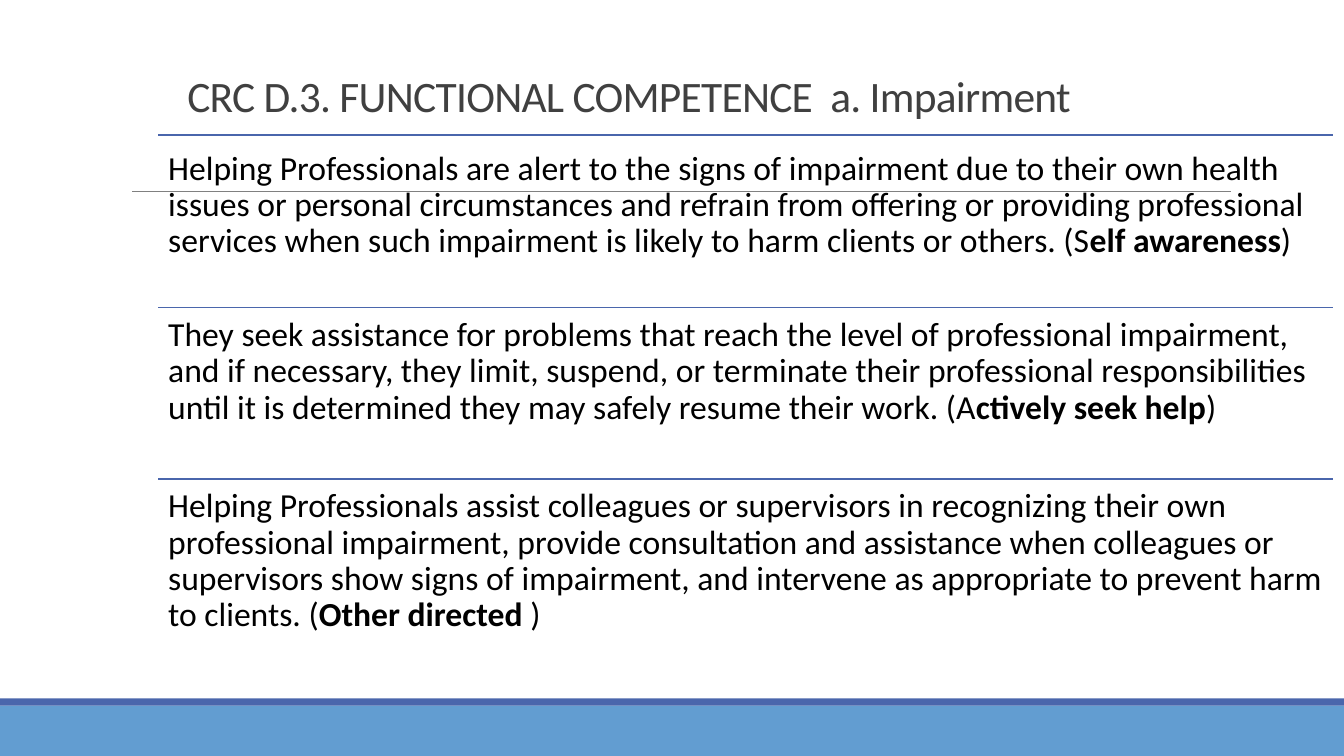
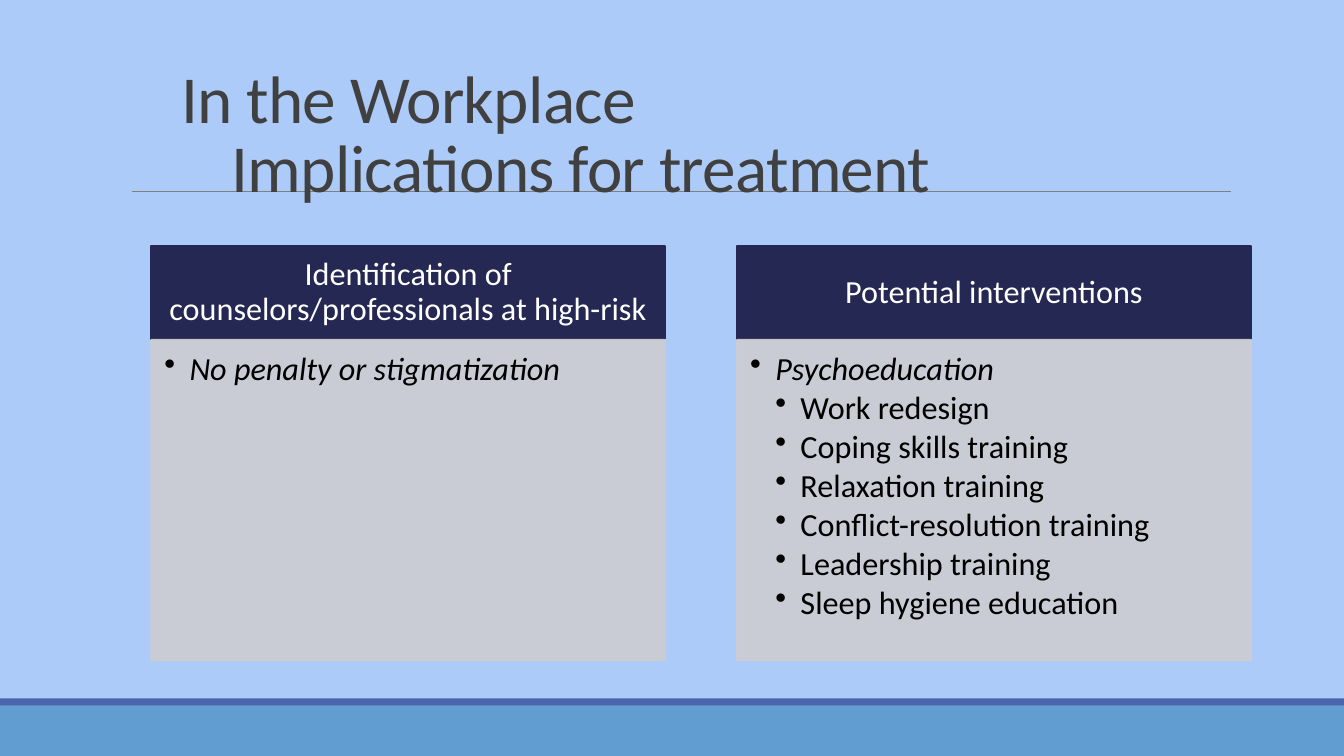
"""Build two slides on impairment and its implications in the workplace."""
from dataclasses import dataclass
from typing import NamedTuple

from lxml.etree import SubElement
from pptx import Presentation
from pptx.dml.color import RGBColor
from pptx.enum.shapes import MSO_CONNECTOR as Connector, MSO_SHAPE as Preset
from pptx.enum.text import MSO_ANCHOR as Anchor, PP_ALIGN as Align
from pptx.oxml.ns import qn
from pptx.util import Inches, Pt

FONT = "Calibri"
COLORS = {
    "white": "FFFFFF",
    "sky": "ACCBF9",
    "band": "629DD1",
    "accent": "4A66AC",
    "rule": "808080",
    "title": "404040",
    "text": "000000",
    "header": "242852",
    "panel": "CDCDD1",
}
PAGE_WIDTH, PAGE_HEIGHT = 13.33, 7.5
DUTY_LEFT, DUTY_RIGHT = 1.57, 13.22
CARD_LEFT, CARD_TOP, CARD_WIDTH, CARD_STEP = 1.5, 2.44, 5.1, 5.81
HEADER_HEIGHT, PANEL_HEIGHT = 0.93, 3.18


class Area(NamedTuple):
    left: float
    top: float
    width: float
    height: float


@dataclass
class Duty:
    rule_top: float
    text_top: float
    text: str
    keyword: str


@dataclass
class Card:
    heading: str
    lead: str
    details: tuple[str, ...] = ()


DUTIES = [
    Duty(1.34, 1.4,
         "Helping Professionals are alert to the signs of impairment due to their own "
         "health issues or personal circumstances and refrain from offering or providing "
         "professional services when such impairment is likely to harm clients or "
         "others. (S", "elf awareness"),
    Duty(3.05, 3.05,
         "They seek assistance for problems that reach the level of professional "
         "impairment, and if necessary, they limit, suspend, or terminate their "
         "professional responsibilities until it is determined they may safely resume "
         "their work. (A", "ctively seek help"),
    Duty(4.75, 4.75,
         "Helping Professionals assist colleagues or supervisors in recognizing their own "
         "professional impairment, provide consultation and assistance when colleagues "
         "or supervisors show signs of impairment, and intervene as appropriate to "
         "prevent harm to clients. (", "Other directed "),
]
CARDS = [
    Card("Identification of counselors/professionals at high-risk",
         "No penalty or stigmatization"),
    Card("Potential interventions", "Psychoeducation",
         ("Work redesign", "Coping skills training", "Relaxation training",
          "Conflict-resolution training", "Leadership training",
          "Sleep hygiene education")),
]


def color(name: str) -> RGBColor:
    """Look up a named colour."""
    return RGBColor.from_string(COLORS[name])


def add_span(para, text: str, *, size: float, fill: str = "text", bold: bool = False,
             italic: bool = False, spacing: float = 0) -> None:
    """Add one formatted run to a paragraph."""
    span = para.add_run()
    span.text = text
    font = span.font
    font.name, font.size, font.bold, font.italic = FONT, Pt(size), bold, italic
    font.color.rgb = color(fill)
    if spacing:
        span._r.get_or_add_rPr().set("spc", str(round(spacing * 100)))


def set_frame(frame, insets: tuple[float, float, float, float], anchor=Anchor.TOP) -> None:
    """Set wrapping, anchor and left, top, right and bottom insets."""
    frame.word_wrap = True
    frame.vertical_anchor = anchor
    (frame.margin_left, frame.margin_top,
     frame.margin_right, frame.margin_bottom) = map(Inches, insets)


def add_text_box(page, area: Area, insets: tuple[float, float, float, float],
                 anchor=Anchor.TOP):
    """Add a text box and return its frame."""
    frame = page.shapes.add_textbox(*map(Inches, area)).text_frame
    set_frame(frame, insets, anchor)
    return frame


def add_rectangle(page, area: Area, fill: str, *, outlined: bool = False,
                  opacity: int = 100):
    """Add a flat rectangle, optionally outlined in its own fill colour."""
    box = page.shapes.add_shape(Preset.RECTANGLE, *map(Inches, area))
    box.shadow.inherit = False
    box.fill.solid()
    box.fill.fore_color.rgb = color(fill)
    if outlined:
        box.line.color.rgb = color(fill)
        box.line.width = Pt(1.25)
    else:
        box.line.fill.background()
    if opacity < 100:
        for tint in box._element.spPr.iter(qn("a:srgbClr")):
            SubElement(tint, qn("a:alpha")).set("val", str(opacity * 1000))
    return box


def add_rule(page, left: float, right: float, top: float, stroke: str,
             width: float) -> None:
    """Draw a horizontal line without a shadow."""
    rule = page.shapes.add_connector(
        Connector.STRAIGHT, Inches(left), Inches(top), Inches(right), Inches(top))
    rule.line.color.rgb = color(stroke)
    rule.line.width = Pt(width)
    SubElement(rule._element.spPr, qn("a:effectLst"))


def add_page(deck, background: str, title: str, area: Area, size: float):
    """Add a slide with the shared bands, rule and title style."""
    page = deck.slides.add_slide(deck.slide_layouts[6])
    page.background.fill.solid()
    page.background.fill.fore_color.rgb = color(background)
    add_rectangle(page, Area(0, 7, PAGE_WIDTH, 0.5), "band")
    add_rectangle(page, Area(0, 6.93, PAGE_WIDTH, 0.07), "accent")
    add_rule(page, 1.31, 12.21, 1.9, "rule", 0.5)
    para = add_text_box(page, area, (0.1, 0.05, 0.1, 0.05), Anchor.BOTTOM).paragraphs[0]
    para.line_spacing = 0.85
    for index, line in enumerate(title.split("\n")):
        if index:
            para.add_line_break()
        add_span(para, line, size=size, fill="title", spacing=-0.5)
    return page


def add_duty(page, duty: Duty) -> None:
    """Draw a rule with a statement below it."""
    add_rule(page, DUTY_LEFT, DUTY_RIGHT, duty.rule_top, "accent", 1.25)
    area = Area(DUTY_LEFT, duty.text_top, 11.64, 1.7)
    para = add_text_box(page, area, (0.1, 0.1, 0.1, 0.1)).paragraphs[0]
    para.line_spacing = 0.9
    add_span(para, duty.text, size=24)
    add_span(para, duty.keyword, size=24, bold=True)
    add_span(para, ")", size=24)


def add_bullet(para, text: str, level: int) -> None:
    """Format a paragraph as a bullet; the first level is italic."""
    properties = para._p.get_or_add_pPr()
    properties.set("marL", str(Inches(0.25 * level)))
    properties.set("indent", str(Inches(-0.25)))
    SubElement(properties, qn("a:buChar")).set("char", "•")
    para.level = level
    para.alignment = Align.LEFT
    para.line_spacing = 0.9
    para.space_after = Pt(3)
    add_span(para, text, size=23, italic=level == 1)


def add_card(page, card: Card, left: float) -> None:
    """Draw a heading bar with a bulleted panel under it."""
    header = add_rectangle(page, Area(left, CARD_TOP, CARD_WIDTH, HEADER_HEIGHT),
                           "header", outlined=True)
    set_frame(header.text_frame, (0.18, 0.1, 0.18, 0.1), Anchor.MIDDLE)
    para = header.text_frame.paragraphs[0]
    para.alignment = Align.CENTER
    para.line_spacing = 0.9
    add_span(para, card.heading, size=23, fill="white")

    panel = add_rectangle(
        page, Area(left, CARD_TOP + HEADER_HEIGHT, CARD_WIDTH, PANEL_HEIGHT),
        "panel", outlined=True, opacity=90)
    frame = panel.text_frame
    set_frame(frame, (0.13, 0.13, 0.18, 0.2))
    add_bullet(frame.paragraphs[0], card.lead, 1)
    for detail in card.details:
        add_bullet(frame.add_paragraph(), detail, 2)


def main() -> None:
    """Build and save the deck."""
    deck = Presentation()
    deck.slide_width, deck.slide_height = Inches(PAGE_WIDTH), Inches(PAGE_HEIGHT)

    page = add_page(deck, "white", "CRC D.3. FUNCTIONAL COMPETENCE  a. Impairment",
                    Area(1.76, 0.2, 11, 1.05), 31)
    for duty in DUTIES:
        add_duty(page, duty)

    page = add_page(deck, "sky", "In the Workplace\n\tImplications for treatment",
                    Area(1.7, 0.47, 10.5, 1.62), 48)
    for index, card in enumerate(CARDS):
        add_card(page, card, CARD_LEFT + index * CARD_STEP)

    deck.save("out.pptx")


if __name__ == "__main__":
    main()
